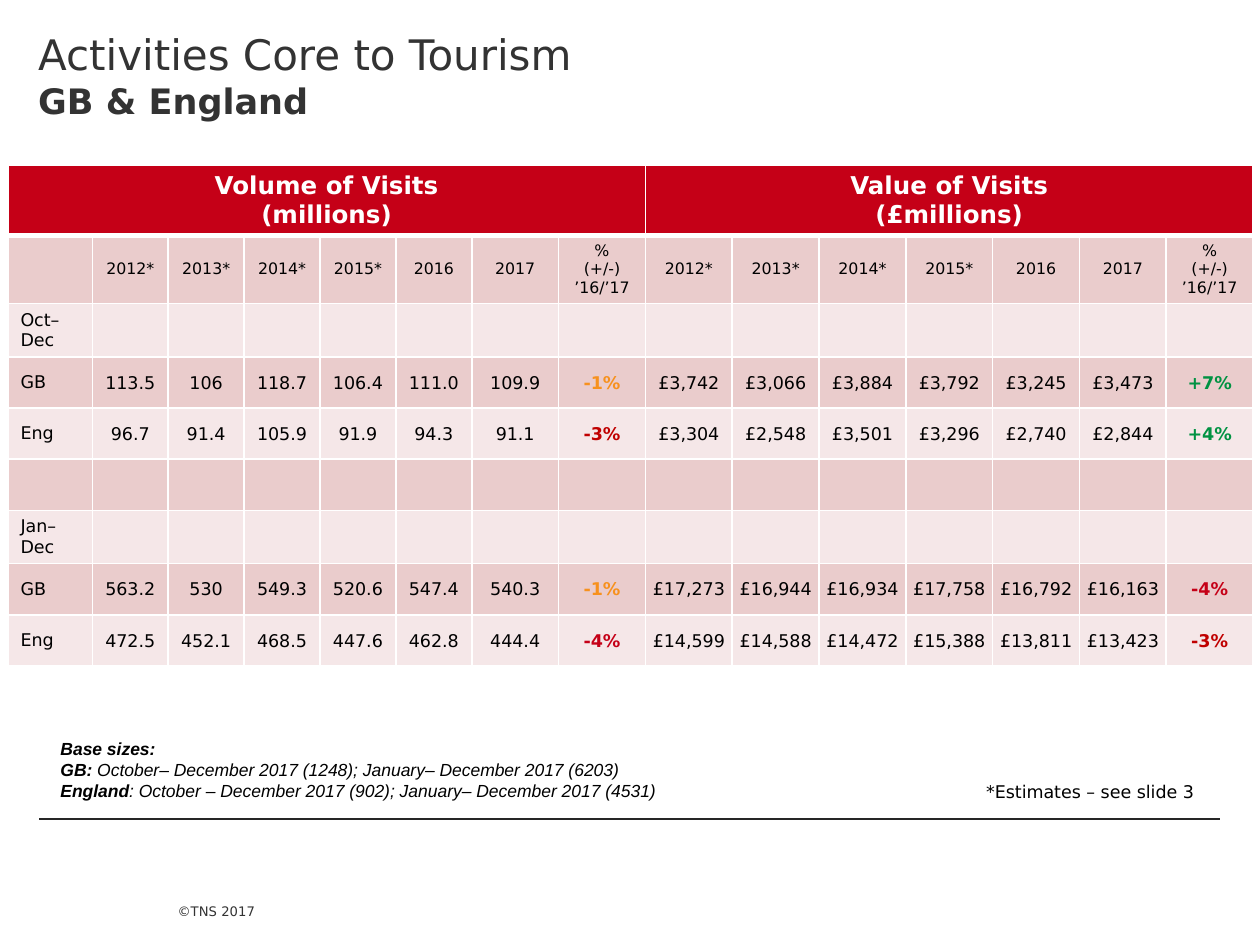
from lxml.etree import SubElement
from pptx import Presentation
from pptx.dml.color import RGBColor
from pptx.enum.shapes import MSO_CONNECTOR
from pptx.enum.text import MSO_ANCHOR, MSO_AUTO_SIZE, PP_ALIGN
from pptx.oxml.ns import qn
from pptx.util import Cm, Pt

COLORS = {"red": "C50017", "dark_red": "C00000", "orange": "F7911E",
          "green": "009242", "rose": "EACCCC", "pale": "F5E7E8",
          "white": "FFFFFF", "black": "000000", "grey": "333333",
          "rule": "262626"}
SANS = "DejaVu Sans"


def add_run(p, text, size, color="black", bold=False, italic=False, font=SANS):
    r = p.add_run()
    r.text = text
    r.font.name, r.font.size = font, Pt(size)
    r.font.bold, r.font.italic = bold, italic
    r.font.color.rgb = RGBColor.from_string(COLORS[color])


def add_border(cell, side, width):
    ln = SubElement(cell._tc.get_or_add_tcPr(), qn(f"a:ln{side}"), w=str(Pt(width)))
    fill = SubElement(ln, qn("a:solidFill"))
    SubElement(fill, qn("a:srgbClr"), val=COLORS["white"])


prs = Presentation()
prs.slide_width, prs.slide_height = Cm(25.4), Cm(19.05)
s = prs.slides.add_slide(prs.slide_layouts[5])

# Title
title = s.shapes.title
title.left, title.top, title.width, title.height = Cm(0), Cm(0), Cm(14.1), Cm(3.58)
tf = title.text_frame
tf.auto_size = MSO_AUTO_SIZE.NONE
tf.vertical_anchor = MSO_ANCHOR.TOP
tf.margin_left = tf.margin_right = Cm(0.77)
tf.margin_top, tf.margin_bottom = Cm(0.58), Cm(0)
p = tf.paragraphs[0]
p.alignment = PP_ALIGN.LEFT
add_run(p, "Activities Core to Tourism", 24, "grey")
p.add_line_break()
add_run(p, "GB & England", 20, "grey", bold=True)

# Table content
years = ["2012*", "2013*", "2014*", "2015*", "2016", "2017", "%\n(+/-) ’16/’17"]
rows = [
    ["Volume of Visits\n(millions)"] + [""] * 7 + ["Value of Visits\n(£millions)"] + [""] * 6,
    [""] + years * 2,
    ["Oct– Dec"] + [""] * 14,
    ["GB", "113.5", "106", "118.7", "106.4", "111.0", "109.9", "-1%",
     "£3,742", "£3,066", "£3,884", "£3,792", "£3,245", "£3,473", "+7%"],
    ["Eng", "96.7", "91.4", "105.9", "91.9", "94.3", "91.1", "-3%",
     "£3,304", "£2,548", "£3,501", "£3,296", "£2,740", "£2,844", "+4%"],
    [""] * 15,
    ["Jan–Dec"] + [""] * 14,
    ["GB", "563.2", "530", "549.3", "520.6", "547.4", "540.3", "-1%",
     "£17,273", "£16,944", "£16,934", "£17,758", "£16,792", "£16,163", "-4%"],
    ["Eng", "472.5", "452.1", "468.5", "447.6", "462.8", "444.4", "-4%",
     "£14,599", "£14,588", "£14,472", "£15,388", "£13,811", "£13,423", "-3%"],
]
change_colors = {"-1%": "orange", "-3%": "dark_red", "-4%": "red",
                 "+7%": "green", "+4%": "green"}
col_widths = [1.7] + [1.53] * 5 + [1.75] * 9
row_height = 1.03

# Table
table = s.shapes.add_table(len(rows), len(col_widths), Cm(0.16), Cm(3.33),
                           Cm(sum(col_widths)), Cm(row_height * len(rows))).table
table.first_row = table.horz_banding = False
for column, width in zip(table.columns, col_widths):
    column.width = Cm(width)
for row in table.rows:
    row.height = Cm(row_height)
table.cell(0, 0).merge(table.cell(0, 7))
table.cell(0, 8).merge(table.cell(0, 14))

for i, values in enumerate(rows):
    for j, value in enumerate(values):
        cell = table.cell(i, j)
        for side in "LRTB":
            heavy = (i, side) in ((0, "B"), (1, "T"))
            add_border(cell, side, 3 if heavy else 1)
        cell.fill.solid()
        fill = "red" if i == 0 else "rose" if i % 2 else "pale"
        cell.fill.fore_color.rgb = RGBColor.from_string(COLORS[fill])
        if i not in (0, 2):
            cell.vertical_anchor = MSO_ANCHOR.MIDDLE
        if i > 1 and j > 0:
            cell.margin_left = cell.margin_right = cell.margin_top = Cm(0.03)
            cell.margin_bottom = Cm(0)
        if not value:
            continue
        size = {0: 14, 1: 9}.get(i, 10)
        color = "white" if i == 0 else change_colors.get(value, "black")
        tf = cell.text_frame
        for k, line in enumerate(value.split("\n")):
            p = tf.add_paragraph() if k else tf.paragraphs[0]
            p.alignment = PP_ALIGN.CENTER if i < 2 or j else PP_ALIGN.LEFT
            add_run(p, line, size, color, bold=color != "black")

# Base sizes
tf = s.shapes.add_textbox(Cm(0.97), Cm(14.76), Cm(21.44), Cm(1.55)).text_frame
tf.word_wrap = True
p = tf.paragraphs[0]
add_run(p, "Base sizes:", 10, bold=True, italic=True, font="Arial")
p.add_line_break()
bases = [("GB:", " October– December 2017 (1248); January– December 2017 (6203)"),
         ("England", ": October – December 2017 (902); January– December 2017 (4531)")]
for k, (area, sample) in enumerate(bases):
    if k:
        p = tf.add_paragraph()
    add_run(p, area, 10, bold=True, italic=True, font="Arial")
    add_run(p, sample, 10, italic=True, font="Arial")

# Estimates note
tf = s.shapes.add_textbox(Cm(19.63), Cm(15.62), Cm(4.88), Cm(0.69)).text_frame
tf.word_wrap = False
add_run(tf.paragraphs[0], "*Estimates – see slide 3", 10)

# Footer rule and copyright
rule = s.shapes.add_connector(MSO_CONNECTOR.STRAIGHT, Cm(0.79), Cm(16.51), Cm(24.59), Cm(16.51))
rule.line.color.rgb = RGBColor.from_string(COLORS["rule"])
rule.line.width = Pt(0.75)
SubElement(rule._element.spPr, qn("a:effectLst"))

tf = s.shapes.add_textbox(Cm(3.58), Cm(17.58), Cm(2.11), Cm(1.47)).text_frame
tf.word_wrap = False
tf.vertical_anchor = MSO_ANCHOR.BOTTOM
tf.margin_left = tf.margin_right = tf.margin_top = Cm(0)
tf.margin_bottom = Cm(0.74)
add_run(tf.paragraphs[0], "©TNS 2017", 7.5, "grey")

prs.save("out.pptx")
